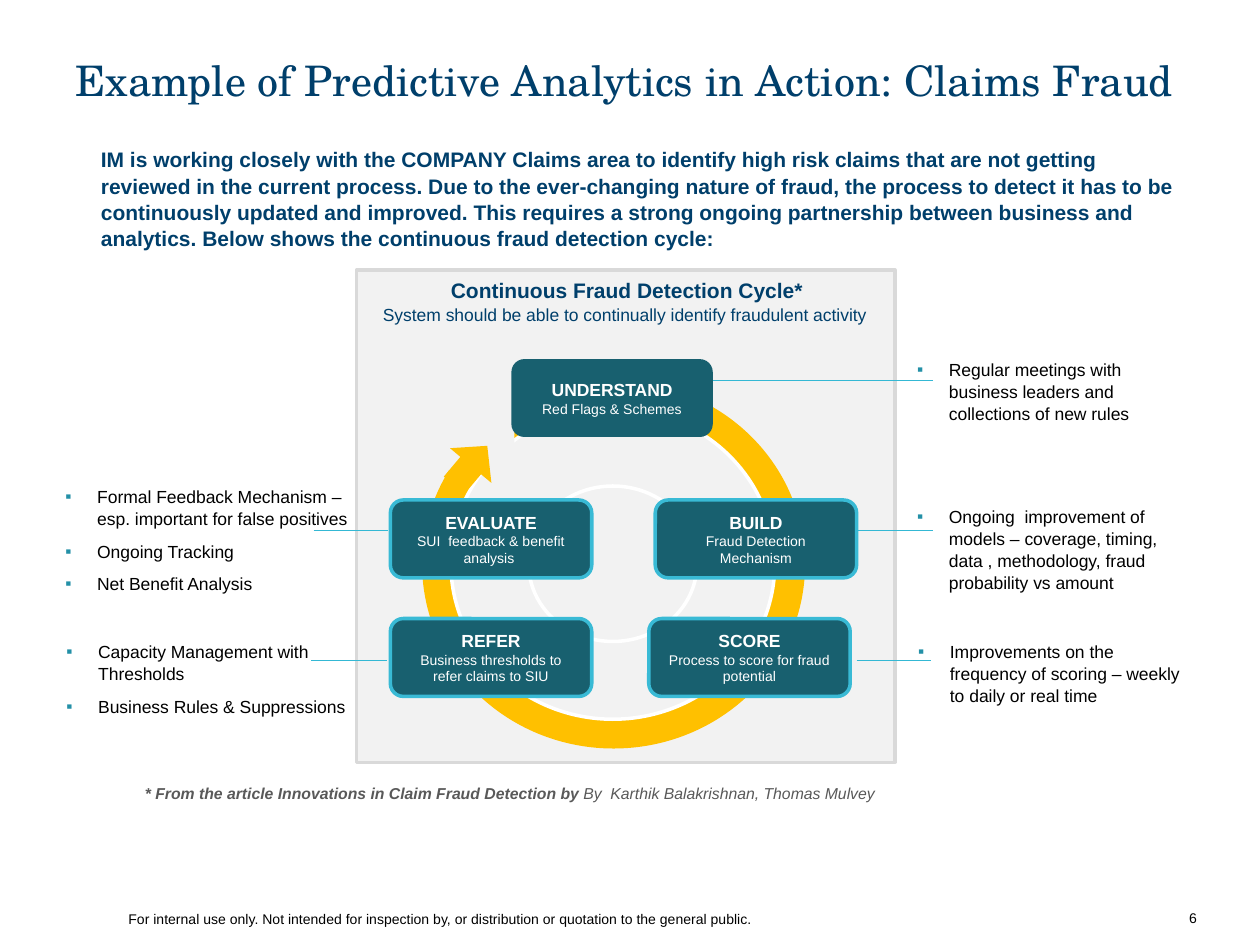
from lxml import etree
from pptx import Presentation
from pptx.dml.color import RGBColor
from pptx.enum.shapes import MSO_CONNECTOR, MSO_SHAPE
from pptx.enum.text import MSO_ANCHOR, MSO_AUTO_SIZE, PP_ALIGN
from pptx.oxml.ns import qn
from pptx.util import Cm, Pt

LEFT, CENTER, RIGHT = PP_ALIGN.LEFT, PP_ALIGN.CENTER, PP_ALIGN.RIGHT
MIDDLE, BOTTOM = MSO_ANCHOR.MIDDLE, MSO_ANCHOR.BOTTOM
NO_AUTOFIT = MSO_AUTO_SIZE.NONE
RECTANGLE, ROUNDED = MSO_SHAPE.RECTANGLE, MSO_SHAPE.ROUNDED_RECTANGLE
DONUT, RIGHT_ARROW = MSO_SHAPE.DONUT, MSO_SHAPE.RIGHT_ARROW
STRAIGHT = MSO_CONNECTOR.STRAIGHT

NAVY, TEAL, CYAN, GOLD = "003F6B", "18606F", "39BAD5", "FFC000"
PALE, SILVER, GRAY = "F2F2F2", "D9D9D9", "595959"
WHITE, BLACK, BULLET, LINK = "FFFFFF", "000000", "2390A7", "34B8D4"


def color(value):
    return RGBColor.from_string(value)


def write(frame, paragraphs, para_format):
    """Fill a frame; each paragraph is a list of (text, size, colour, font values)."""
    frame.auto_size = NO_AUTOFIT
    for number, runs in enumerate(paragraphs):
        para = frame.paragraphs[0] if number == 0 else frame.add_paragraph()
        for name, value in para_format.items():
            setattr(para, name, value)
        for text, size, ink, values in runs:
            span = para.add_run()
            span.text = text
            span.font.size = Pt(size)
            span.font.color.rgb = color(ink)
            for name, value in ({"name": "Arial"} | values).items():
                setattr(span.font, name, value)


deck = Presentation()
deck.slide_width, deck.slide_height = Cm(25.4), Cm(19.05)
slide = deck.slides.add_slide(deck.slide_layouts[1])
shapes = slide.shapes

# Title and introduction
title, intro = shapes.title, slide.placeholders[1]
for holder, place in (
    (title, (1.27, 0.76, 22.86, 1.78)),
    (intro, (1.78, 2.59, 22.35, 2.84)),
):
    holder.left, holder.top, holder.width, holder.height = map(Cm, place)
title.text_frame.vertical_anchor = MIDDLE
write(title.text_frame,
      [[("Example of Predictive Analytics in Action: Claims Fraud", 24, NAVY,
         {"name": "TeX Gyre Schola"})]],
      {"alignment": LEFT, "line_spacing": 0.95})

intro_properties = intro.text_frame.paragraphs[0]._p.get_or_add_pPr()
intro_properties.set("marL", "0")
intro_properties.set("indent", "0")
etree.SubElement(intro_properties, qn("a:buNone"))
write(intro.text_frame,
      [[("IM is working closely with the COMPANY Claims area to identify high risk "
         "claims that are not getting reviewed in the current process. Due to the "
         "ever-changing nature of fraud, the process to detect it has to be "
         "continuously updated and improved. This requires a strong ongoing "
         "partnership between business and analytics. Below shows the continuous "
         "fraud detection cycle:", 12, NAVY, {"bold": True})]],
      {"line_spacing": 1.05, "space_before": Pt(0), "space_after": Pt(6)})
intro.text_frame.margin_top = Cm(0.34)

# Panel, ring and arrowhead, then the steps of the cycle
understand = "UNDERSTAND", "Red Flags & Schemes"
build = "BUILD", "Fraud Detection Mechanism"
score = "SCORE", "Process to score for fraud potential"
refer = "REFER", "Business thresholds to refer claims to SIU"
evaluate = "EVALUATE", "SUI  feedback & benefit analysis "
STEP = (4.06, 1.57)
for kind, place, fill, outline, adjustment, rotation, step in (
    (RECTANGLE, (7.19, 5.44, 10.85, 9.93), PALE, SILVER, None, 0, None),
    (DONUT, (8.51, 7.67, 7.72, 7.42), GOLD, None, 0.12, 0, None),
    (DONUT, (9.09, 8.23, 6.53, 6.27), PALE, WHITE, 0.25, 0, None),
    (RECTANGLE, (8.74, 8.03, 1.63, 1.45), PALE, None, None, 0, None),
    (RIGHT_ARROW, (8.97, 8.84, 1.04, 1.09), GOLD, None, None, 310, None),
    (ROUNDED, (13.21, 10.08, *STEP), TEAL, CYAN, None, 0, build),
    (ROUNDED, (13.08, 12.47, *STEP), TEAL, CYAN, None, 0, score),
    (ROUNDED, (7.87, 12.47, *STEP), TEAL, CYAN, None, 0, refer),
    (ROUNDED, (7.87, 10.08, *STEP), TEAL, CYAN, None, 0, evaluate),
    (ROUNDED, (10.31, 7.24, *STEP), TEAL, None, None, 0, understand),
):
    shape = shapes.add_shape(kind, *map(Cm, place))
    shape.shadow.inherit = False
    shape.rotation = rotation
    shape.fill.solid()
    shape.fill.fore_color.rgb = color(fill)
    if outline:
        shape.line.color.rgb = color(outline)
        shape.line.width = Pt(2)
    else:
        shape.line.fill.background()
    if adjustment:
        shape.adjustments[0] = adjustment
    if step:
        name, detail = step
        shape.text_frame.vertical_anchor = MIDDLE
        write(shape.text_frame,
              [[(name, 10, WHITE, {"bold": True})], [(detail, 8, WHITE, {})]],
              {"alignment": CENTER})

# Lines from the steps to their notes
for start, end, height in (
    (14.38, 18.8, 7.67),
    (17.27, 18.8, 10.69),
    (17.27, 18.77, 13.31),
    (6.32, 7.82, 10.69),
    (6.27, 7.8, 13.31),
):
    link = shapes.add_connector(STRAIGHT, Cm(start), Cm(height), Cm(end), Cm(height))
    link.line.color.rgb = color(LINK)
    link.line.width = Pt(0.75)
    etree.SubElement(link._element.spPr, qn("a:effectLst"))

# Bulleted notes beside the panel
for place, notes in (
    ((18.24, 7.09, 5.61, 1.55),
     ["Regular meetings with business leaders and collections of new rules"]),
    ((18.24, 10.06, 5.61, 1.96),
     ["Ongoing  improvement of models – coverage, timing, data , methodology, "
      "fraud probability vs amount"]),
    ((18.26, 12.78, 5.89, 1.55),
     ["Improvements on the frequency of scoring – weekly to daily or real time"]),
    ((1.09, 12.78, 6.55, 1.75),
     ["Capacity Management with Thresholds", "Business Rules & Suppressions"]),
    ((1.07, 9.65, 6.35, 2.39),
     ["Formal Feedback Mechanism – esp. important for false positives",
      "Ongoing Tracking", "Net Benefit Analysis"]),
):
    box = shapes.add_textbox(*map(Cm, place))
    box.text_frame.word_wrap = True
    write(box.text_frame, [[(note, 10, BLACK, {})] for note in notes],
          {"line_spacing": 1.05})
    for number, para in enumerate(box.text_frame.paragraphs):
        properties = para._p.get_or_add_pPr()
        properties.set("marL", str(Cm(0.64)))
        properties.set("indent", str(-Cm(0.64)))
        bullet_color = etree.SubElement(properties, qn("a:buClr"))
        etree.SubElement(bullet_color, qn("a:srgbClr"), val=BULLET)
        etree.SubElement(properties, qn("a:buFont"), typeface="Arial")
        etree.SubElement(properties, qn("a:buChar"), char="▪")
        if number:
            para.space_before = Pt(6)

# Panel heading, source line, footer and page number
heading = [
    [("Continuous Fraud Detection Cycle*", 12, NAVY, {"bold": True})],
    [("System should be able to continually identify fraudulent activity ",
      10, NAVY, {})],
]
citation = [[
    ("* From the article Innovations in Claim Fraud Detection by ", 9, GRAY,
     {"bold": True, "italic": True}),
    ("By  Karthik Balakrishnan, Thomas Mulvey", 9, GRAY, {"italic": True}),
]]
footer = [[("For internal use only. Not intended for inspection by, or distribution "
            "or quotation to the general public.", 8, BLACK, {})]]
page_number = [[("6", 8, BLACK, {})]]
FLUSH = {"margin_left": 0, "margin_right": 0, "vertical_anchor": BOTTOM,
         "word_wrap": True}
for place, paragraphs, alignment, frame_format in (
    ((7.42, 5.44, 10.44, 1.19), heading, CENTER, {"word_wrap": False}),
    ((2.67, 15.65, 15.37, 0.64), citation, LEFT, {"word_wrap": False}),
    ((2.59, 18.34, 18.85, 0.36), footer, LEFT,
     FLUSH | {"margin_top": 0, "margin_bottom": 0}),
    ((20.75, 17.91, 3.38, 0.89), page_number, RIGHT, FLUSH),
):
    box = shapes.add_textbox(*map(Cm, place))
    for name, value in frame_format.items():
        setattr(box.text_frame, name, value)
    write(box.text_frame, paragraphs, {"alignment": alignment, "line_spacing": 1.05})

deck.save("out.pptx")
